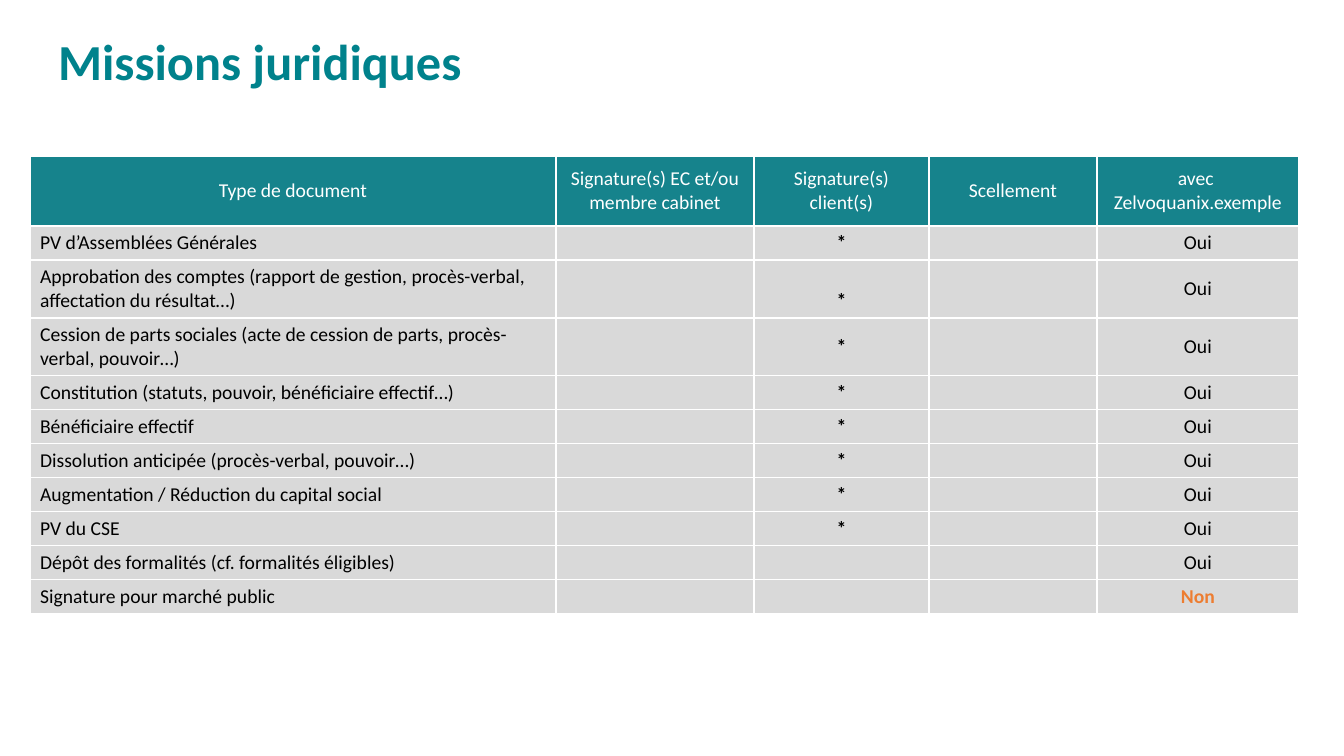
from dataclasses import dataclass

from lxml.etree import SubElement
from pptx import Presentation
from pptx.dml.color import RGBColor
from pptx.enum.text import MSO_ANCHOR, PP_ALIGN
from pptx.oxml.ns import qn
from pptx.util import Emu, Pt


@dataclass(frozen=True)
class Theme:
    font: str = "Calibri"
    title: str = "00828C"
    head: str = "16838C"
    body: str = "D9D9D9"
    white: str = "FFFFFF"
    black: str = "000000"
    alert: str = "ED7D31"
    large: int = 36
    small: int = 14


THEME = Theme()
SCALE = 914400 / 100.8
WIDTHS = [526, 198, 175, 168, 202]
HEAD, LINE, DOUBLE = 70, 34, 58

HEADERS = [
    "Type de document",
    "Signature(s) EC et/ou membre cabinet",
    "Signature(s) client(s)",
    "Scellement",
    "avec \nZelvoquanix.exemple",
]
ROWS = [
    ("PV d’Assemblées Générales", "*", "Oui", LINE),
    ("Approbation des comptes (rapport de gestion, procès-verbal, "
     "affectation du résultat…)", "*", "Oui", DOUBLE),
    ("Cession de parts sociales (acte de cession de parts, procès-verbal, "
     "pouvoir…)", "*", "Oui", DOUBLE),
    ("Constitution (statuts, pouvoir, bénéficiaire effectif…)", "*", "Oui", LINE),
    ("Bénéficiaire effectif", "*", "Oui", LINE),
    ("Dissolution anticipée (procès-verbal, pouvoir…)", "*", "Oui", LINE),
    ("Augmentation / Réduction du capital social", "*", "Oui", LINE),
    ("PV du CSE", "*", "Oui", LINE),
    ("Dépôt des formalités (cf. formalités éligibles)", "", "Oui", LINE),
    ("Signature pour marché public", "", "Non", LINE),
]
LOW_STARS = 2


def px(count):
    return Emu(round(count * SCALE))


def style(para, size, color, bold=False, align=PP_ALIGN.LEFT):
    para.alignment = align
    font = para.font
    font.name = THEME.font
    font.size = Pt(size)
    font.bold = bold
    font.color.rgb = RGBColor.from_string(color)


def add_title(slide, text):
    title = slide.shapes.title
    title.left, title.top = px(48), px(25)
    title.width, title.height = px(847), px(72)
    frame = title.text_frame
    frame.text = text
    frame.vertical_anchor = MSO_ANCHOR.TOP
    style(frame.paragraphs[0], THEME.large, THEME.title, True)
    frame.paragraphs[0].line_spacing = 1.0


def fill_cell(cell, text, fill, color, bold=False,
              align=PP_ALIGN.CENTER, anchor=MSO_ANCHOR.MIDDLE):
    cell.fill.solid()
    cell.fill.fore_color.rgb = RGBColor.from_string(fill)
    cell.vertical_anchor = anchor
    cell.text = text
    for para in cell.text_frame.paragraphs:
        style(para, THEME.small, color, bold, align)
        if not text:
            end = SubElement(para._p, qn("a:endParaRPr"))
            end.set("sz", str(THEME.small * 100))


def fill_row(table, index, name, star, answer):
    low = index <= LOW_STARS
    no = answer == "Non"
    cells = table.rows[index].cells
    fill_cell(cells[0], name, THEME.body, THEME.black,
              align=PP_ALIGN.LEFT, anchor=MSO_ANCHOR.TOP)
    for col in (1, 3):
        fill_cell(cells[col], "", THEME.body, THEME.black)
    fill_cell(cells[2], star, THEME.body, THEME.black, True,
              anchor=MSO_ANCHOR.BOTTOM if low else MSO_ANCHOR.MIDDLE)
    fill_cell(cells[4], answer, THEME.body,
              THEME.alert if no else THEME.black, no)


def add_grid(slide):
    heights = [HEAD] + [row[-1] for row in ROWS]
    frame = slide.shapes.add_table(
        len(heights), len(WIDTHS), px(30), px(156),
        px(sum(WIDTHS)), px(sum(heights)))
    table = frame.table
    table.horz_banding = False
    for column, width in zip(table.columns, WIDTHS):
        column.width = px(width)
    for row, height in zip(table.rows, heights):
        row.height = px(height)
    for cell, text in zip(table.rows[0].cells, HEADERS):
        fill_cell(cell, text, THEME.head, THEME.white)
    for index, (name, star, answer, _) in enumerate(ROWS, 1):
        fill_row(table, index, name, star, answer)


def main():
    deck = Presentation()
    deck.slide_width, deck.slide_height = px(1344), px(756)
    slide = deck.slides.add_slide(deck.slide_layouts[5])
    add_title(slide, "Missions juridiques")
    add_grid(slide)
    deck.save("out.pptx")


if __name__ == "__main__":
    main()
